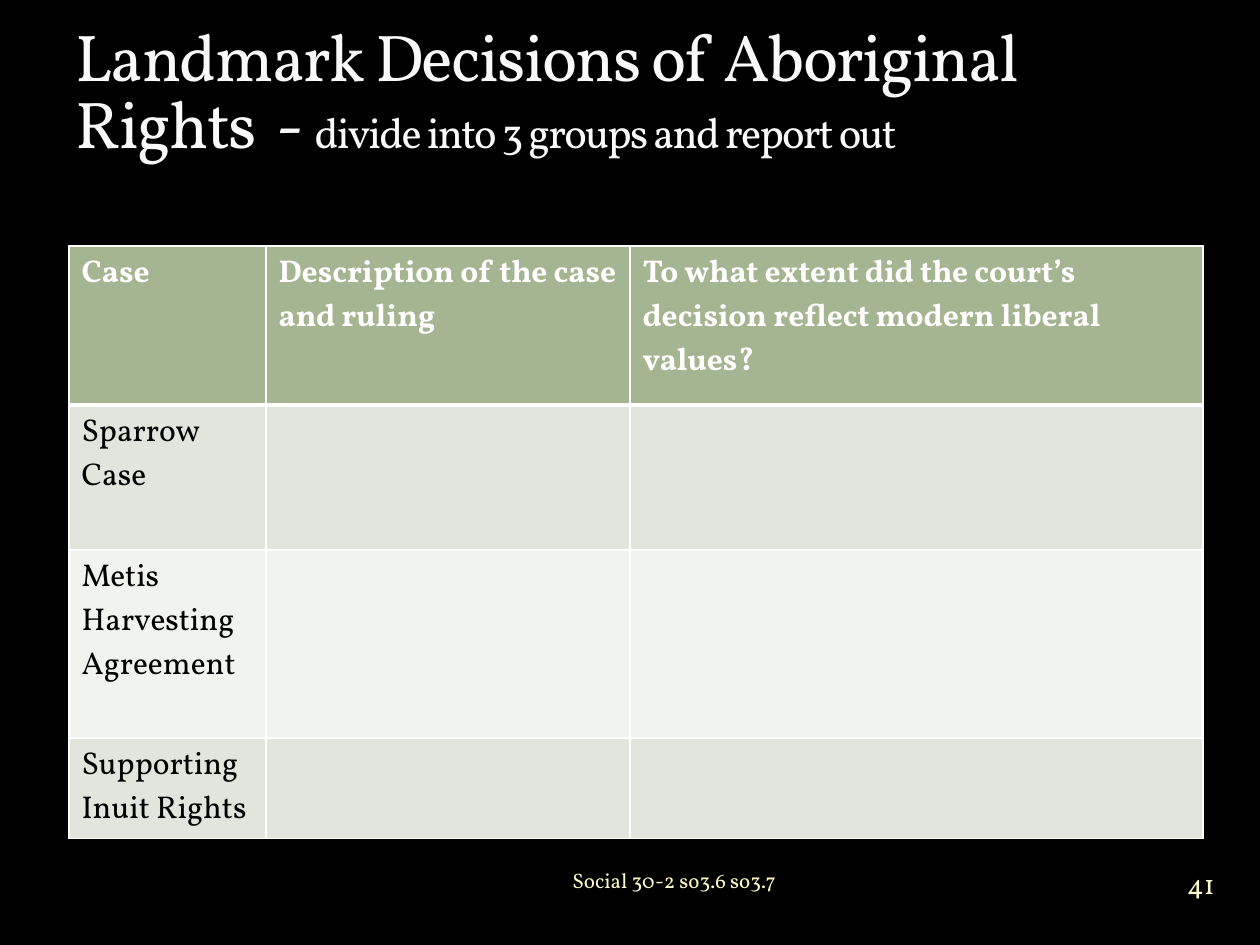
from dataclasses import dataclass

from lxml.etree import SubElement
from pptx import Presentation
from pptx.dml.color import RGBColor
from pptx.enum.text import MSO_ANCHOR, PP_ALIGN
from pptx.oxml.ns import qn
from pptx.util import Emu, Pt

FONT = "Vollkorn"
BLACK = RGBColor(0x00, 0x00, 0x00)
WHITE = RGBColor(0xFF, 0xFF, 0xFF)
TITLE_WHITE = RGBColor(0xF9, 0xF9, 0xF9)
CREAM = RGBColor(0xFE, 0xFA, 0xC9)
HEADER_GREEN = RGBColor(0xA5, 0xB5, 0x92)
BAND_DARK = RGBColor(0xE1, 0xE5, 0xDC)
BAND_LIGHT = RGBColor(0xF0, 0xF3, 0xEE)

HEADERS = (
    "Case",
    "Description of the case and ruling",
    "To what extent did the court’s decision reflect modern liberal values?",
)
CASES = ("Sparrow Case", "Metis Harvesting Agreement", "Supporting Inuit Rights")
COLUMN_WIDTHS = (197, 364, 573)
ROW_HEIGHTS = (159, 145, 188, 100)


@dataclass(frozen=True)
class Box:
    left: int
    top: int
    width: int
    height: int


@dataclass(frozen=True)
class FooterItem:
    text: str
    box: Box
    size: int
    align: PP_ALIGN
    margin: int


FOOTER_ITEMS = (
    FooterItem("41", Box(1159, 852, 84, 63), 16, PP_ALIGN.CENTER, 0),
    FooterItem("Social 30-2 so3.6 so3.7", Box(294, 854, 494, 53), 12, PP_ALIGN.RIGHT, 12),
)


def px(count: int) -> Emu:
    return Emu(round(count * 914400 / 126))


def place(box: Box) -> tuple[Emu, Emu, Emu, Emu]:
    return px(box.left), px(box.top), px(box.width), px(box.height)


def add_span(para, text: str, size: float, color: RGBColor, bold: bool = False):
    span = para.add_run()
    span.text = text
    span.font.name = FONT
    span.font.size = Pt(size)
    span.font.bold = bold
    span.font.color.rgb = color
    return span


def add_title(page) -> None:
    title = page.shapes.title
    title.left, title.top, title.width, title.height = place(Box(63, 21, 1134, 168))
    frame = title.text_frame
    frame.word_wrap = True
    frame.vertical_anchor = MSO_ANCHOR.TOP
    para = frame.paragraphs[0]
    para.alignment = PP_ALIGN.LEFT
    para.line_spacing = 0.85
    for text, size in (
        ("Landmark Decisions of Aboriginal Rights  - ", 37.8),
        ("divide into 3 groups and report out", 24.3),
    ):
        span = add_span(para, text, size, TITLE_WHITE)
        span.font._element.set("spc", "-100")


def set_borders(cell, bottom_width: int) -> None:
    """Draw white borders, which must precede the fill in the cell properties."""
    properties = cell._tc.get_or_add_tcPr()
    for side in ("lnL", "lnR", "lnT", "lnB"):
        width = bottom_width if side == "lnB" else 1
        line = SubElement(properties, qn(f"a:{side}"), w=str(Pt(width)))
        fill = SubElement(line, qn("a:solidFill"))
        SubElement(fill, qn("a:srgbClr"), val=str(WHITE))


def add_case_table(page) -> None:
    rows = [HEADERS] + [(case, "", "") for case in CASES]
    box = Box(69, 246, sum(COLUMN_WIDTHS), sum(ROW_HEIGHTS))
    table = page.shapes.add_table(len(rows), len(HEADERS), *place(box)).table
    for column, width in zip(table.columns, COLUMN_WIDTHS):
        column.width = px(width)
    for index, (texts, height) in enumerate(zip(rows, ROW_HEIGHTS)):
        table.rows[index].height = px(height)
        is_header = index == 0
        band = BAND_DARK if index % 2 else BAND_LIGHT
        for cell, text in zip(table.rows[index].cells, texts):
            set_borders(cell, 3 if is_header else 1)
            cell.fill.solid()
            cell.fill.fore_color.rgb = HEADER_GREEN if is_header else band
            if text:
                color = WHITE if is_header else BLACK
                add_span(cell.text_frame.paragraphs[0], text, 18, color, is_header)


def add_footer_item(page, item: FooterItem) -> None:
    frame = page.shapes.add_textbox(*place(item.box)).text_frame
    frame.word_wrap = True
    frame.vertical_anchor = MSO_ANCHOR.MIDDLE
    frame.margin_left = frame.margin_right = px(item.margin)
    frame.margin_top = frame.margin_bottom = px(item.margin // 2)
    para = frame.paragraphs[0]
    para.alignment = item.align
    add_span(para, item.text, item.size, CREAM)


def main() -> None:
    deck = Presentation()
    deck.slide_width, deck.slide_height = px(1260), px(945)
    page = deck.slides.add_slide(deck.slide_layouts[5])
    page.background.fill.solid()
    page.background.fill.fore_color.rgb = BLACK
    add_case_table(page)
    for item in FOOTER_ITEMS:
        add_footer_item(page, item)
    add_title(page)
    deck.save("out.pptx")


if __name__ == "__main__":
    main()
